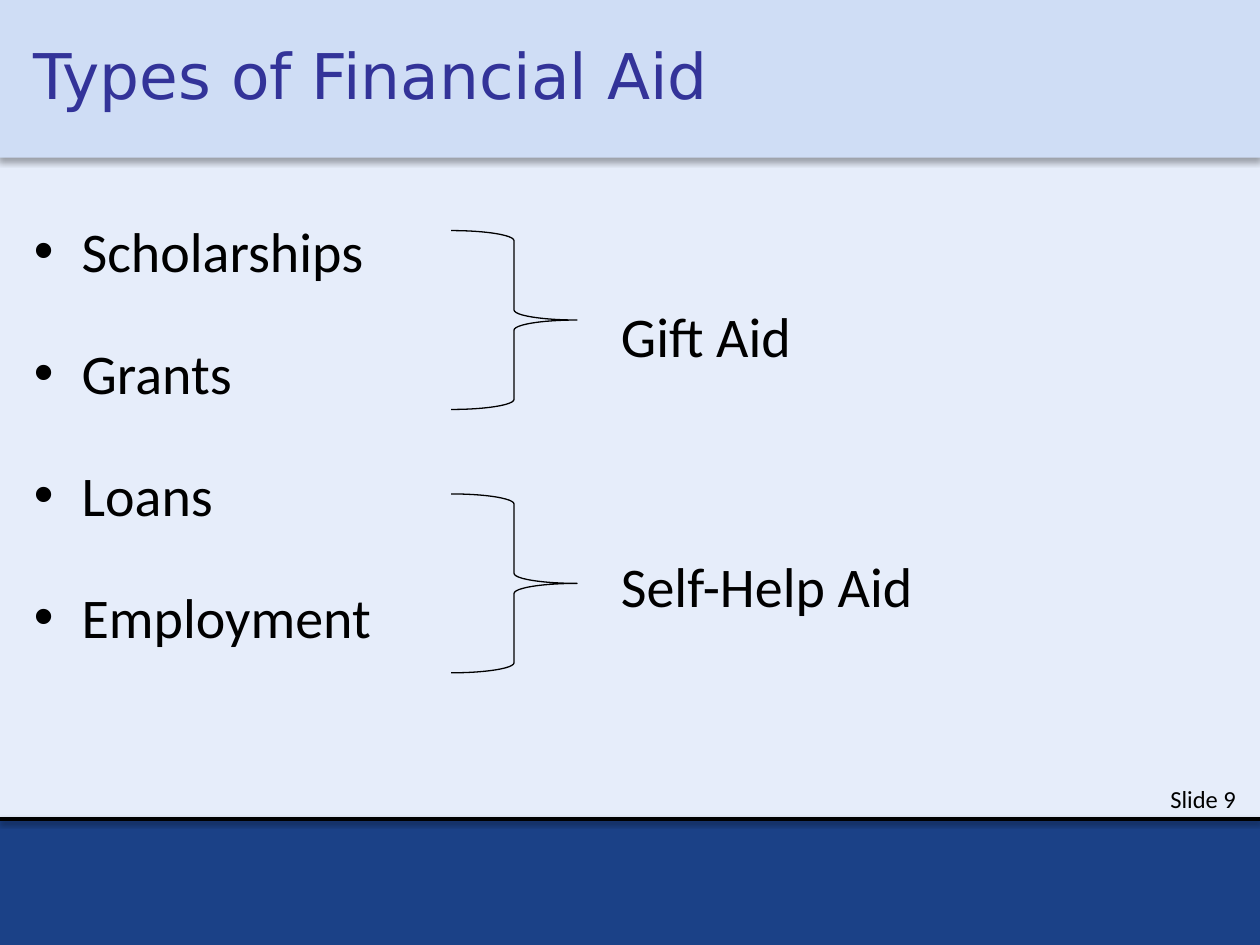
from lxml import etree
from pptx import Presentation
from pptx.dml.color import RGBColor
from pptx.enum.shapes import MSO_CONNECTOR, MSO_SHAPE
from pptx.enum.text import MSO_ANCHOR, PP_ALIGN
from pptx.oxml.ns import qn
from pptx.util import Inches, Pt

RECT, HEADER = MSO_SHAPE.RECTANGLE, MSO_SHAPE.ROUND_2_SAME_RECTANGLE
BRACE = MSO_SHAPE.RIGHT_BRACE
STRAIGHT = MSO_CONNECTOR.STRAIGHT
LEFT, RIGHT = PP_ALIGN.LEFT, PP_ALIGN.RIGHT
TOP, MIDDLE = MSO_ANCHOR.TOP, MSO_ANCHOR.MIDDLE

BLACK, NAVY, PALE, SKY, INDIGO = "000000", "1B4187", "E6EDFA", "CFDDF5", "333399"
AID_TYPES = ["Scholarships", "Grants", "Loans", "Employment"]
# Category, top of its brace, top of its label
CATEGORIES = [("Gift Aid", 1.83, 2.34), ("Self-Help Aid", 3.92, 4.33)]


def rgb(code):
    return RGBColor.from_string(code)


def add_shadow(item, opacity, blur, distance):
    """Give an item a downward shadow; blur and distance are in points."""
    properties = item._element.spPr
    for old in properties.findall(qn("a:effectLst")):
        properties.remove(old)
    effects = etree.SubElement(properties, qn("a:effectLst"))
    shadow = etree.SubElement(effects, qn("a:outerShdw"), blurRad=str(Pt(blur)),
                              dist=str(Pt(distance)), dir="5400000", rotWithShape="0")
    color = etree.SubElement(shadow, qn("a:srgbClr"), val=BLACK)
    etree.SubElement(color, qn("a:alpha"), val=str(opacity * 1000))


def add_block(slide, kind, left, top, width, height, fill=None, line=None,
              weight=2, adjustments=()):
    block = slide.shapes.add_shape(kind, Inches(left), Inches(top),
                                   Inches(width), Inches(height))
    block.shadow.inherit = False
    for index, value in enumerate(adjustments):
        block.adjustments[index] = value
    if fill:
        block.fill.solid()
        block.fill.fore_color.rgb = rgb(fill)
    else:
        block.fill.background()
    if line:
        block.line.color.rgb = rgb(line)
        block.line.width = Pt(weight)
    else:
        block.line.fill.background()
    return block


def add_bullet(paragraph, indent=0.38):
    properties = paragraph._p.get_or_add_pPr()
    properties.set("marL", str(Inches(indent)))
    properties.set("indent", str(-Inches(indent)))
    etree.SubElement(properties, qn("a:buFont"), typeface="Arial")
    etree.SubElement(properties, qn("a:buChar"), char="•")


def add_text(slide, lines, left, top, width, height, size=32, font="Calibri",
             color=BLACK, align=LEFT, anchor=TOP, spacing=None, gap=0,
             bullets=False, right_inset=0.1):
    box = slide.shapes.add_textbox(Inches(left), Inches(top),
                                   Inches(width), Inches(height))
    frame = box.text_frame
    frame.word_wrap = True
    frame.vertical_anchor = anchor
    frame.margin_right = Inches(right_inset)
    for index, line in enumerate(lines):
        paragraph = frame.add_paragraph() if index else frame.paragraphs[0]
        paragraph.alignment = align
        if spacing:
            paragraph.line_spacing = spacing
        if index and gap:
            paragraph.space_before = Pt(gap)
        if bullets:
            add_bullet(paragraph)
        run = paragraph.add_run()
        run.text = line
        run.font.size = Pt(size)
        run.font.name = font
        run.font.color.rgb = rgb(color)


def add_background(slide):
    add_block(slide, RECT, 0, 0, 10, 6.5, fill=PALE, line=PALE)
    add_block(slide, RECT, 0, 6.5, 10, 1, fill=NAVY, line=NAVY)
    header = add_block(slide, HEADER, -0.02, 0, 10.02, 1.25, fill=SKY,
                       adjustments=(0, 0))
    add_shadow(header, 32, 3.5, 2.2)
    footer_rule = slide.shapes.add_connector(STRAIGHT, 0, Inches(6.5),
                                             Inches(10), Inches(6.5))
    footer_rule.line.color.rgb = rgb(BLACK)
    footer_rule.line.width = Pt(2)
    add_shadow(footer_rule, 38, 3.1, 1.6)


def main():
    deck = Presentation()
    deck.slide_width, deck.slide_height = Inches(10), Inches(7.5)
    slide = deck.slides.add_slide(deck.slide_layouts[6])

    add_background(slide)
    add_text(slide, ["Slide 9"], 7, 6.17, 3, 0.25, size=14, align=RIGHT,
             right_inset=0.19)
    add_text(slide, ["Types of Financial Aid"], 0.17, 0, 9.67, 1.25, size=36,
             font="DejaVu Sans", color=INDIGO, anchor=MIDDLE, spacing=0.9)
    add_text(slide, AID_TYPES, 0.17, 1.67, 9.67, 4.95, gap=31.2, bullets=True)
    for category, brace_top, label_top in CATEGORIES:
        add_block(slide, BRACE, 3.58, brace_top, 1, 1.42, line=BLACK,
                  weight=0.75, adjustments=(0.08, 0.5))
        add_text(slide, [category], 4.83, label_top, 4.33, 0.64)

    deck.save("out.pptx")


if __name__ == "__main__":
    main()
